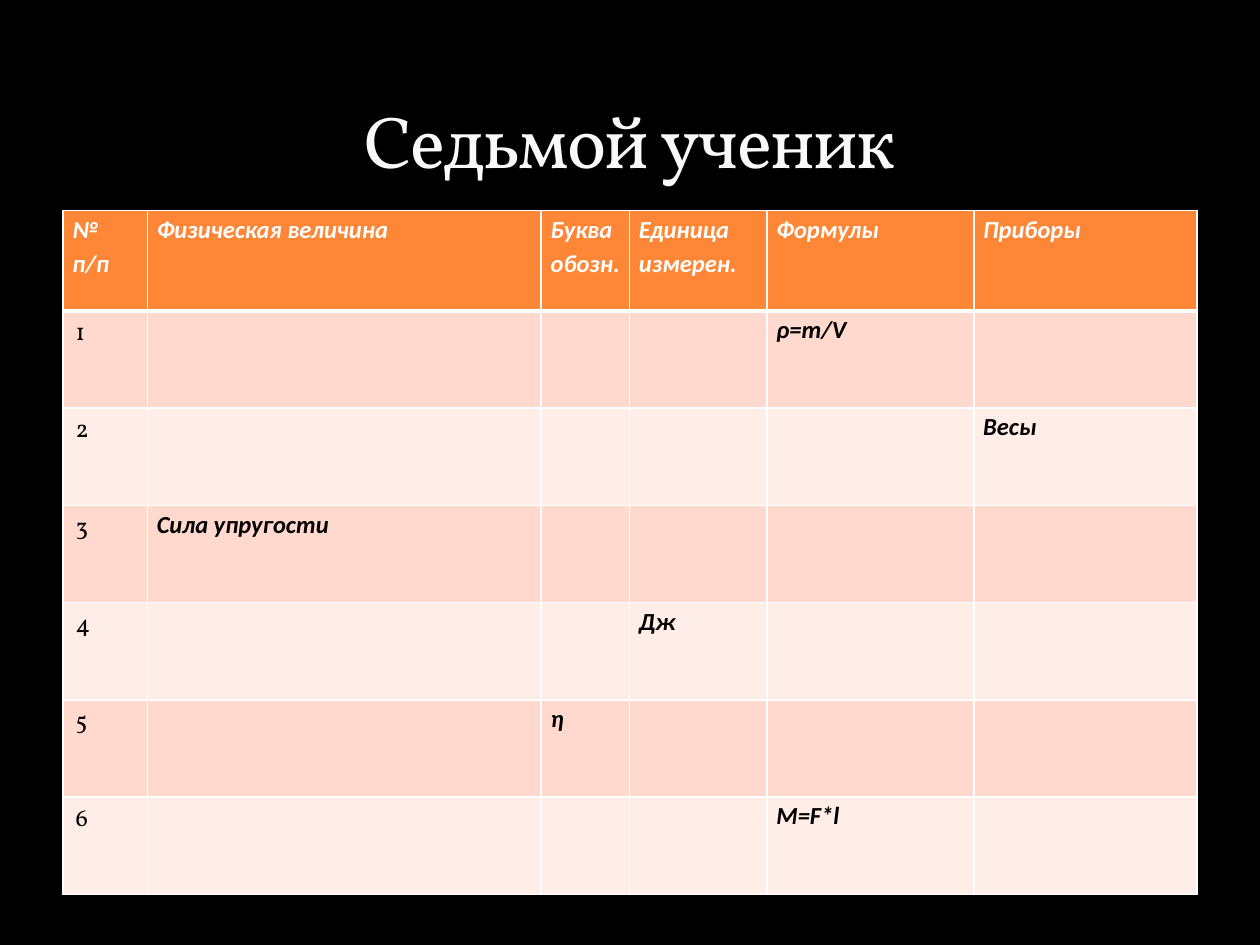
from dataclasses import dataclass

from lxml.etree import SubElement
from pptx import Presentation
from pptx.dml.color import RGBColor as Color
from pptx.enum.text import MSO_ANCHOR as Anchor, PP_ALIGN as Align
from pptx.oxml.ns import qn
from pptx.util import Cm, Pt


@dataclass(frozen=True)
class Theme:
    background: str = "000000"
    title: str = "F9F9F9"
    header_fill: str = "FE8637"
    header_text: str = "FFFFFF"
    body_text: str = "000000"
    bands: tuple[str, str] = ("FFD9CE", "FFEDE8")
    border: str = "FFFFFF"
    border_width: float = 1
    header_border_width: float = 3
    serif: str = "Vollkorn"
    sans: str = "Calibri"
    title_size: float = 42
    table_size: float = 14


@dataclass(frozen=True)
class Column:
    heading: str
    width: float


THEME = Theme()
COLUMNS = [
    Column("№ п/п", 1.7),
    Column("Физическая величина", 7.94),
    Column("Буква обозн.", 1.78),
    Column("Единица измерен.", 2.77),
    Column("Формулы", 4.17),
    Column("Приборы", 4.5),
]
# Each row gives one clue: its column and its text
CLUES = [(4, "ρ=m/V"), (5, "Весы"), (1, "Сила упругости"),
         (3, "Дж"), (2, "η"), (4, "М=F*l")]
HEADER_HEIGHT, ROW_HEIGHT = 2.03, 1.96


def style_cell(cell, fill: str, top: float, bottom: float) -> None:
    """Give a cell its borders and its fill."""
    properties = cell._tc.get_or_add_tcPr()
    side = THEME.border_width
    for tag, width in (("lnL", side), ("lnR", side), ("lnT", top), ("lnB", bottom)):
        line = SubElement(properties, qn(f"a:{tag}"), w=str(Pt(width)))
        solid = SubElement(line, qn("a:solidFill"))
        SubElement(solid, qn("a:srgbClr"), val=THEME.border)
    cell.fill.solid()
    cell.fill.fore_color.rgb = Color.from_string(fill)


def write_label(cell, text: str, color: str) -> None:
    """Write a bold italic heading or clue."""
    cell.margin_left = cell.margin_right = Cm(0.19)
    cell.margin_top = cell.margin_bottom = 0
    para = cell.text_frame.paragraphs[0]
    para.text = text
    para.line_spacing = 1.15
    set_font(para, THEME.sans, THEME.table_size, color)
    para.font.bold = para.font.italic = True


def write_number(cell, number: int) -> None:
    para = cell.text_frame.paragraphs[0]
    para.text = str(number)
    set_font(para, THEME.serif, THEME.table_size, THEME.body_text)
    para.font.bold = False


def set_font(para, name: str, size: float, color: str) -> None:
    para.font.name = name
    para.font.size = Pt(size)
    para.font.color.rgb = Color.from_string(color)


def add_title(page, text: str) -> None:
    box = page.shapes.add_textbox(Cm(1.27), Cm(0.43), Cm(22.86), Cm(3.38))
    frame = box.text_frame
    frame.word_wrap = True
    frame.vertical_anchor = Anchor.BOTTOM
    para = frame.paragraphs[0]
    para.alignment = Align.CENTER
    span = para.add_run()
    span.text = text
    set_font(para, THEME.serif, THEME.title_size, THEME.title)
    span._r.get_or_add_rPr().set("spc", "-100")


def add_clue_table(page) -> None:
    width = sum(column.width for column in COLUMNS)
    height = HEADER_HEIGHT + ROW_HEIGHT * len(CLUES)
    table = page.shapes.add_table(len(CLUES) + 1, len(COLUMNS), Cm(1.27), Cm(4.24),
                                  Cm(width), Cm(height)).table
    thin, thick = THEME.border_width, THEME.header_border_width

    # Header row
    table.rows[0].height = Cm(HEADER_HEIGHT)
    for index, column in enumerate(COLUMNS):
        table.columns[index].width = Cm(column.width)
        cell = table.cell(0, index)
        style_cell(cell, THEME.header_fill, thin, thick)
        write_label(cell, column.heading, THEME.header_text)

    # Numbered rows in alternating bands
    for number, (clue_column, clue) in enumerate(CLUES, start=1):
        table.rows[number].height = Cm(ROW_HEIGHT)
        band = THEME.bands[(number - 1) % 2]
        for cell in table.rows[number].cells:
            style_cell(cell, band, thick if number == 1 else thin, thin)
        write_number(table.cell(number, 0), number)
        write_label(table.cell(number, clue_column), clue, THEME.body_text)


def main() -> None:
    deck = Presentation()
    deck.slide_width, deck.slide_height = Cm(25.4), Cm(19.05)
    page = deck.slides.add_slide(deck.slide_layouts[6])
    page.background.fill.solid()
    page.background.fill.fore_color.rgb = Color.from_string(THEME.background)
    add_clue_table(page)
    add_title(page, "Седьмой ученик")
    deck.save("out.pptx")


if __name__ == "__main__":
    main()
